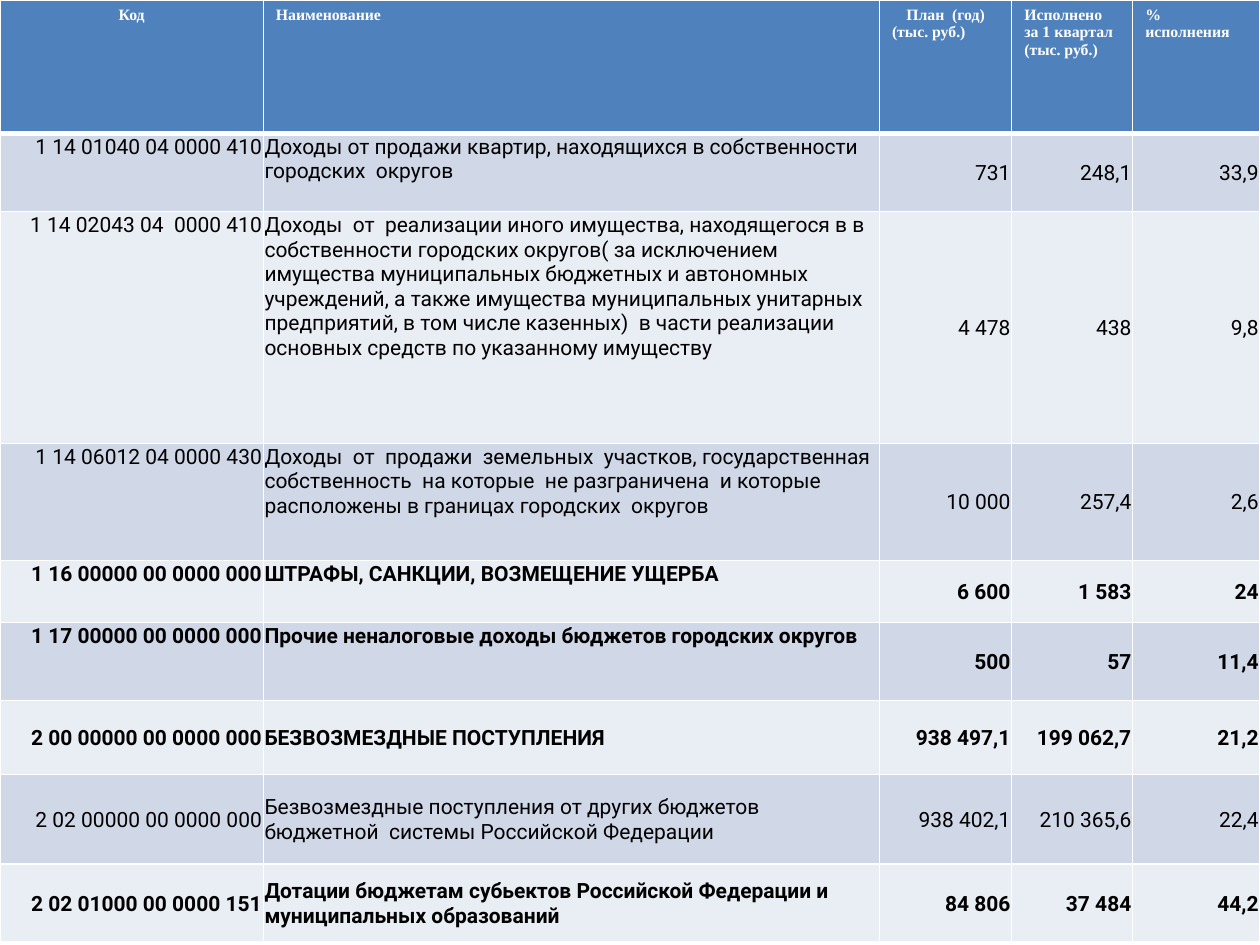
import pptx
import pptx.util
import pptx.dml.color
import pptx.enum.text
import pptx.oxml
import pptx.oxml.ns
from pptx.util import Inches

RGBColor = pptx.dml.color.RGBColor
Align = pptx.enum.text.PP_ALIGN
Anchor = pptx.enum.text.MSO_ANCHOR

WHITE = RGBColor(0xFF, 0xFF, 0xFF)
BLACK = RGBColor(0x00, 0x00, 0x00)
HEADER_BLUE = RGBColor(0x4F, 0x81, 0xBD)
BANDS = (RGBColor(0xD0, 0xD8, 0xE8), RGBColor(0xE9, 0xED, 0xF4))

COLUMN_WIDTHS = (2.09, 4.89, 1.05, 0.96, 1.01)
HEADER_HEIGHT = 1.06
HEADERS = (
    [("Код", Align.CENTER)],
    [("Наименование", Align.LEFT)],
    [("План  (год)", Align.CENTER), ("(тыс. руб.)", Align.LEFT)],
    [("Исполнено за 1 квартал (тыс. руб.)", Align.LEFT)],
    [("% исполнения", Align.LEFT)],
)

# Row height, bold, anchor of code and name, then the five cell texts
INCOME_ROWS = (
    (0.62, False, Anchor.TOP,
     ("1 14 01040 04 0000 410",
      "Доходы от продажи квартир, находящихся в собственности городских  округов",
      "731", "248,1", "33,9")),
    (1.84, False, Anchor.TOP,
     ("1 14 02043 04  0000 410",
      "Доходы  от  реализации иного имущества, находящегося в в собственности "
      "городских округов( за исключением имущества муниципальных бюджетных и "
      "автономных учреждений, а также имущества муниципальных унитарных "
      "предприятий, в том числе казенных)  в части реализации основных средств "
      "по указанному имуществу",
      "4 478", "438", "9,8")),
    (0.93, False, Anchor.TOP,
     ("1 14 06012 04 0000 430",
      "Доходы  от  продажи  земельных  участков, государственная  собственность  "
      "на которые  не разграничена  и которые  расположены в границах "
      "городских  округов",
      "10 000", "257,4", "2,6")),
    (0.49, True, Anchor.TOP,
     ("1 16 00000 00 0000 000", "ШТРАФЫ, САНКЦИИ, ВОЗМЕЩЕНИЕ УЩЕРБА",
      "6 600", "1 583", "24")),
    (0.62, True, Anchor.TOP,
     ("1 17 00000 00 0000 000",
      "Прочие неналоговые доходы бюджетов городских округов",
      "500", "57", "11,4")),
    (0.59, True, Anchor.MIDDLE,
     ("2 00 00000 00 0000 000", "БЕЗВОЗМЕЗДНЫЕ ПОСТУПЛЕНИЯ",
      "938 497,1", "199 062,7", "21,2")),
    (0.71, False, Anchor.MIDDLE,
     ("2 02 00000 00 0000 000",
      "Безвозмездные поступления от других бюджетов бюджетной  системы "
      "Российской Федерации",
      "938 402,1", "210 365,6", "22,4")),
    (0.62, True, Anchor.MIDDLE,
     ("2 02 01000 00 0000 151",
      "Дотации бюджетам субьектов Российской Федерации и муниципальных образований",
      "84 806", "37 484", "44,2")),
)


def set_borders(cell, top=1, bottom=1):
    """Draw white cell borders; widths are in points."""
    properties = cell._tc.get_or_add_tcPr()
    sides = (("L", 1), ("R", 1), ("T", top), ("B", bottom))
    for position, (side, width) in enumerate(sides):
        line = pptx.oxml.parse_xml(
            f'<a:ln{side} {pptx.oxml.ns.nsdecls("a")} w="{pptx.util.Pt(width)}">'
            f'<a:solidFill><a:srgbClr val="{WHITE}"/></a:solidFill></a:ln{side}>')
        properties.insert(position, line)


def fill_cell(cell, fill):
    cell.fill.solid()
    cell.fill.fore_color.rgb = fill


def style_paragraph(para, text, align, font_name, size, color, bold):
    para.text = text
    para.alignment = align
    para.font.name = font_name
    para.font.size = pptx.util.Pt(size)
    para.font.color.rgb = color
    para.font.bold = bold


def write_header(table):
    for column, lines in enumerate(HEADERS):
        cell = table.cell(0, column)
        fill_cell(cell, HEADER_BLUE)
        set_borders(cell, bottom=3)
        frame = cell.text_frame
        for index, (text, align) in enumerate(lines):
            para = frame.add_paragraph() if index else frame.paragraphs[0]
            style_paragraph(para, text, align, "Times New Roman", 9, WHITE, True)


def write_income_row(table, row, bold, label_anchor, texts):
    for column, text in enumerate(texts):
        cell = table.cell(row, column)
        fill_cell(cell, BANDS[(row - 1) % 2])
        set_borders(cell, top=3 if row == 1 else 1)
        cell.margin_left = cell.margin_right = cell.margin_top = Inches(0.01)
        cell.margin_bottom = 0
        cell.vertical_anchor = label_anchor if column < 2 else Anchor.MIDDLE
        align = Align.LEFT if column == 1 else Align.RIGHT
        style_paragraph(cell.text_frame.paragraphs[0], text, align,
                        "Roboto", 12, BLACK, bold)


def add_income_table(page, left, top, width, height):
    table = page.shapes.add_table(len(INCOME_ROWS) + 1, len(HEADERS),
                                  left, top, width, height).table
    for column, column_width in zip(table.columns, COLUMN_WIDTHS):
        column.width = Inches(column_width)
    table.rows[0].height = Inches(HEADER_HEIGHT)
    write_header(table)
    for row, (row_height, bold, anchor, texts) in enumerate(INCOME_ROWS, start=1):
        table.rows[row].height = Inches(row_height)
        write_income_row(table, row, bold, anchor, texts)


def main():
    deck = pptx.Presentation()
    deck.slide_width = Inches(10)
    deck.slide_height = Inches(7.5)
    page = deck.slides.add_slide(deck.slide_layouts[6])
    add_income_table(page, 0, 0, deck.slide_width, deck.slide_height)
    deck.save("out.pptx")


if __name__ == "__main__":
    main()
